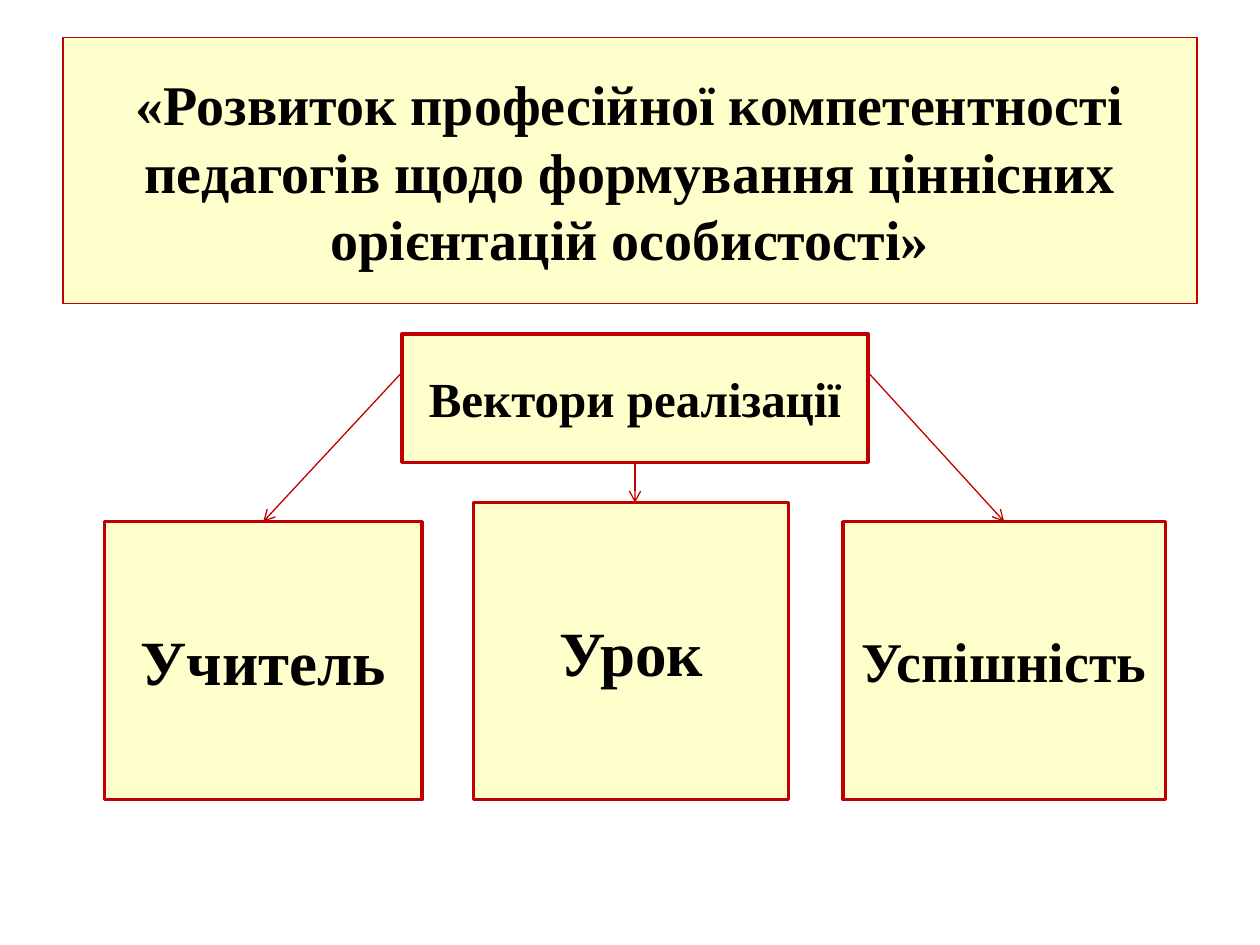
from dataclasses import dataclass

from lxml import etree
from pptx import Presentation
from pptx import util as u
from pptx.dml.color import RGBColor
from pptx.enum import shapes, text
from pptx.oxml.ns import qn


@dataclass(frozen=True)
class Theme:
    font: str = "Times New Roman"
    ink: str = "000000"
    fill: str = "FFFFCC"
    line: str = "C00000"
    thin: float = 0.75
    thick: float = 2
    small: int = 28
    medium: int = 32
    large: int = 36


T = Theme()

# Places are percentages of the slide's width and height.
TITLE = ("«Розвиток професійної компетентності педагогів щодо формування "
         "ціннісних орієнтацій особистості»", (5, 4, 90, 28.13))
HUB = ("Вектори реалізації", (31.9, 35.33, 37, 13.6))
BOTTOM = 84.6
VECTORS = [
    ("Учитель", 8.3, 55.2, 25.2, T.large),
    ("Урок", 37.6, 53.2, 25, T.large),
    ("Успішність", 66.9, 55.2, 25.6, T.medium),
]
SIDE_EXIT = 0.3

prs = Presentation()
prs.slide_width, prs.slide_height = u.Inches(10), u.Inches(7.5)


def x(share):
    return round(prs.slide_width * share / 100)


def y(share):
    return round(prs.slide_height * share / 100)


def write(sp, content, size, color=T.ink, bold=True):
    tf = sp.text_frame
    tf.word_wrap = True
    tf.auto_size = text.MSO_AUTO_SIZE.NONE
    tf.vertical_anchor = text.MSO_ANCHOR.MIDDLE
    p = tf.paragraphs[0]
    p.alignment = text.PP_ALIGN.CENTER
    r = p.add_run()
    r.text = content
    r.font.name, r.font.size, r.font.bold = T.font, u.Pt(size), bold
    r.font.color.rgb = RGBColor.from_string(color)


def outline(sp, width):
    sp.line.color.rgb = RGBColor.from_string(T.line)
    sp.line.width = u.Pt(width)


def paint(sp, width):
    sp.fill.solid()
    sp.fill.fore_color.rgb = RGBColor.from_string(T.fill)
    outline(sp, width)


def add_box(s, content, place, size):
    left, top, width, height = place
    sp = s.shapes.add_shape(shapes.MSO_SHAPE.RECTANGLE,
                            x(left), y(top), x(width), y(height))
    sp.shadow.inherit = False
    paint(sp, T.thick)
    write(sp, content, size)


def add_arrow(s, start, end):
    c = s.shapes.add_connector(shapes.MSO_CONNECTOR.STRAIGHT,
                               x(start[0]), y(start[1]), x(end[0]), y(end[1]))
    outline(c, T.thin)
    ln = c.line._get_or_add_ln()
    etree.SubElement(ln, qn("a:tailEnd"), type="arrow")
    etree.SubElement(c._element.spPr, qn("a:effectLst"))


def main():
    s = prs.slides.add_slide(prs.slide_layouts[5])
    title, (left, top, width, height) = TITLE
    sp = s.shapes.title
    sp.left, sp.top, sp.width, sp.height = x(left), y(top), x(width), y(height)
    paint(sp, T.thin)
    write(sp, title, T.medium)

    label, hub = HUB
    add_box(s, label, hub, T.small)
    for name, left, top, width, size in VECTORS:
        add_box(s, name, (left, top, width, BOTTOM - top), size)

    left, top, width, height = hub
    middle, side = left + width / 2, top + height * SIDE_EXIT
    starts = [(left, side), (middle, top + height), (left + width, side)]
    centres = [v[1] + v[3] / 2 for v in VECTORS]
    centres[1] = middle
    for start, centre, vector in zip(starts, centres, VECTORS):
        add_arrow(s, start, (centre, vector[2]))

    prs.save("out.pptx")


if __name__ == "__main__":
    main()
